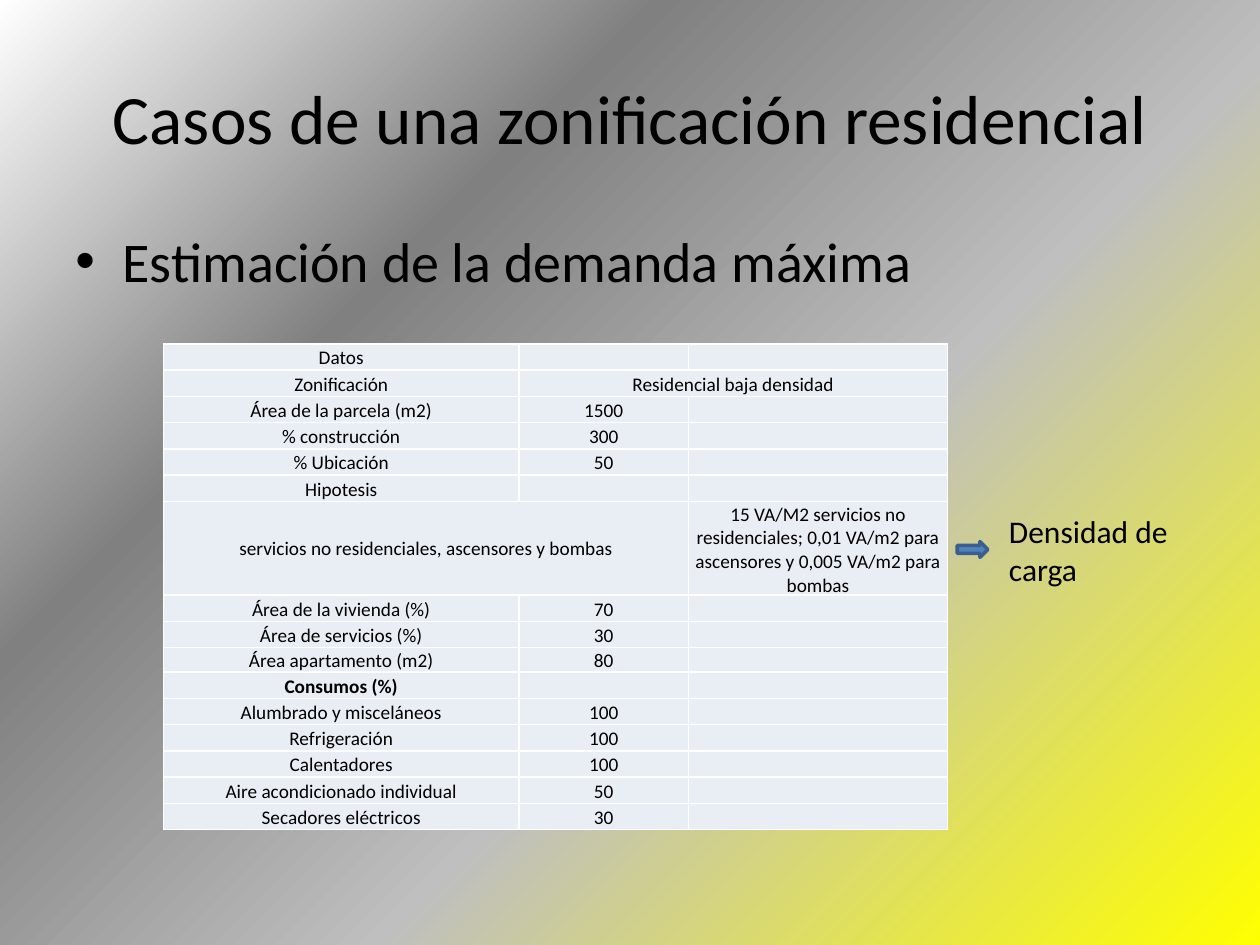
from lxml.etree import SubElement
from pptx import Presentation
from pptx.dml.color import RGBColor
from pptx.enum.shapes import MSO_SHAPE
from pptx.enum.text import MSO_ANCHOR, MSO_AUTO_SIZE, PP_ALIGN
from pptx.oxml import parse_xml
from pptx.oxml.ns import nsdecls, qn
from pptx.util import Pt

COLORS = {
    "text": "000000", "cell": "E9EDF4", "border": "FFFFFF",
    "arrow": "4F81BD", "arrow_line": "3A5F8C",
}
BACKGROUND_STOPS = [(0, "FFFF00"), (40, "BFBFBF"), (70, "808080"), (100, "FFFFFF")]
FONT = "Calibri"
CELL_SIZE = 11
COLUMN_WIDTHS = [203, 97, 148]
ROW_HEIGHT = 15
SHORT_ROW = 9
HEADING = "Consumos (%)"
MERGES = [((1, 1), (1, 2)), ((6, 0), (6, 1))]
ROWS = [
    ("Datos", "", ""),
    ("Zonificación", "Residencial baja densidad", ""),
    ("Área de la parcela (m2)", "1500", ""),
    ("% construcción", "300", ""),
    ("% Ubicación", "50", ""),
    ("Hipotesis", "", ""),
    ("servicios no residenciales, ascensores y bombas", "",
     "15 VA/M2 servicios no residenciales; 0,01 VA/m2 para ascensores "
     "y 0,005 VA/m2 para bombas"),
    ("Área de la vivienda (%)", "70", ""),
    ("Área de servicios (%)", "30", ""),
    ("Área apartamento (m2)", "80", ""),
    (HEADING, "", ""),
    ("Alumbrado y misceláneos", "100", ""),
    ("Refrigeración", "100", ""),
    ("Calentadores", "100", ""),
    ("Aire acondicionado individual", "50", ""),
    ("Secadores eléctricos", "30", ""),
]


def color(name):
    return RGBColor.from_string(COLORS[name])


def add_run(paragraph, text, size, bold=False):
    run = paragraph.add_run()
    run.text = text
    run.font.name = FONT
    run.font.size = Pt(size)
    run.font.bold = bold
    run.font.color.rgb = color("text")


def add_text(slide, box, text, size, align=PP_ALIGN.LEFT, anchor=MSO_ANCHOR.TOP):
    """Add a wrapped text box with one paragraph and return its frame."""
    frame = slide.shapes.add_textbox(*map(Pt, box)).text_frame
    frame.word_wrap = True
    frame.vertical_anchor = anchor
    paragraph = frame.paragraphs[0]
    paragraph.alignment = align
    add_run(paragraph, text, size)
    return frame


def add_background(slide):
    """Fill the slide with a gradient that spreads from the bottom right corner."""
    stops = "".join(
        f'<a:gs pos="{position * 1000}"><a:srgbClr val="{value}"/></a:gs>'
        for position, value in BACKGROUND_STOPS)
    background = parse_xml(
        f'<p:bg {nsdecls("p", "a")}><p:bgPr><a:gradFill rotWithShape="1">'
        f'<a:gsLst>{stops}</a:gsLst><a:path path="circle">'
        '<a:fillToRect l="100000" t="100000"/></a:path></a:gradFill>'
        '<a:effectLst/></p:bgPr></p:bg>')
    slide.element.cSld.insert(0, background)


def add_bullet_line(slide, box, text):
    frame = add_text(slide, box, text, 32)
    properties = frame.paragraphs[0]._p.get_or_add_pPr()
    properties.set("marL", str(Pt(27)))
    properties.set("indent", str(Pt(-27)))
    spacing = SubElement(properties, qn("a:spcBef"))
    SubElement(spacing, qn("a:spcPct"), val="20000")
    SubElement(properties, qn("a:buFont"), typeface="Arial")
    SubElement(properties, qn("a:buChar"), char="•")


def add_borders(cell):
    properties = cell._tc.get_or_add_tcPr()
    for index, side in enumerate(("lnL", "lnR", "lnT", "lnB")):
        line = parse_xml(
            f'<a:{side} {nsdecls("a")} w="{Pt(1)}"><a:solidFill>'
            f'<a:srgbClr val="{COLORS["border"]}"/></a:solidFill></a:{side}>')
        properties.insert(index, line)


def fill_cell(cell, text, anchor):
    cell.margin_left = cell.margin_right = cell.margin_top = Pt(0.75)
    cell.margin_bottom = Pt(0)
    cell.vertical_anchor = anchor
    cell.fill.solid()
    cell.fill.fore_color.rgb = color("cell")
    add_borders(cell)
    paragraph = cell.text_frame.paragraphs[0]
    paragraph.alignment = PP_ALIGN.CENTER
    if text:
        add_run(paragraph, text, CELL_SIZE, bold=text == HEADING)
    else:
        SubElement(paragraph._p, qn("a:endParaRPr"), sz=str(CELL_SIZE * 100))


def add_data_table(slide, left, top):
    table = slide.shapes.add_table(
        len(ROWS), len(COLUMN_WIDTHS), Pt(left), Pt(top),
        Pt(sum(COLUMN_WIDTHS)), Pt(ROW_HEIGHT * len(ROWS))).table
    table.first_row = table.horz_banding = False
    for column, width in zip(table.columns, COLUMN_WIDTHS):
        column.width = Pt(width)
    for row in table.rows:
        row.height = Pt(ROW_HEIGHT)
    table.rows[SHORT_ROW].height = Pt(ROW_HEIGHT - 1)
    for row, texts in enumerate(ROWS):
        for column, text in enumerate(texts):
            centred = (row, column) == (6, 0)
            anchor = MSO_ANCHOR.MIDDLE if centred else MSO_ANCHOR.BOTTOM
            fill_cell(table.cell(row, column), text, anchor)
    for first, last in MERGES:
        table.cell(*first).merge(table.cell(*last))


def add_load_note(slide, left, top):
    """Add the arrow beside the table and the label it points to."""
    label = add_text(slide, (left + 22.5, top, 113, 51), "Densidad de carga", 18)
    label.auto_size = MSO_AUTO_SIZE.SHAPE_TO_FIT_TEXT
    arrow = slide.shapes.add_shape(
        MSO_SHAPE.RIGHT_ARROW, Pt(left), Pt(top + 20.5), Pt(17.5), Pt(9))
    arrow.shadow.inherit = False
    arrow.fill.solid()
    arrow.fill.fore_color.rgb = color("arrow")
    arrow.line.color.rgb = color("arrow_line")
    arrow.line.width = Pt(2)


def main():
    presentation = Presentation()
    presentation.slide_width = Pt(720)
    presentation.slide_height = Pt(540)
    slide = presentation.slides.add_slide(presentation.slide_layouts[6])
    add_background(slide)
    add_text(slide, (36, 21.6, 648, 90), "Casos de una zonificación residencial",
             39.6, PP_ALIGN.CENTER, MSO_ANCHOR.MIDDLE)
    add_bullet_line(slide, (36, 126, 648, 53), "Estimación de la demanda máxima")
    add_data_table(slide, 93.5, 196.5)
    add_load_note(slide, 547, 289)
    presentation.save("out.pptx")


if __name__ == "__main__":
    main()
